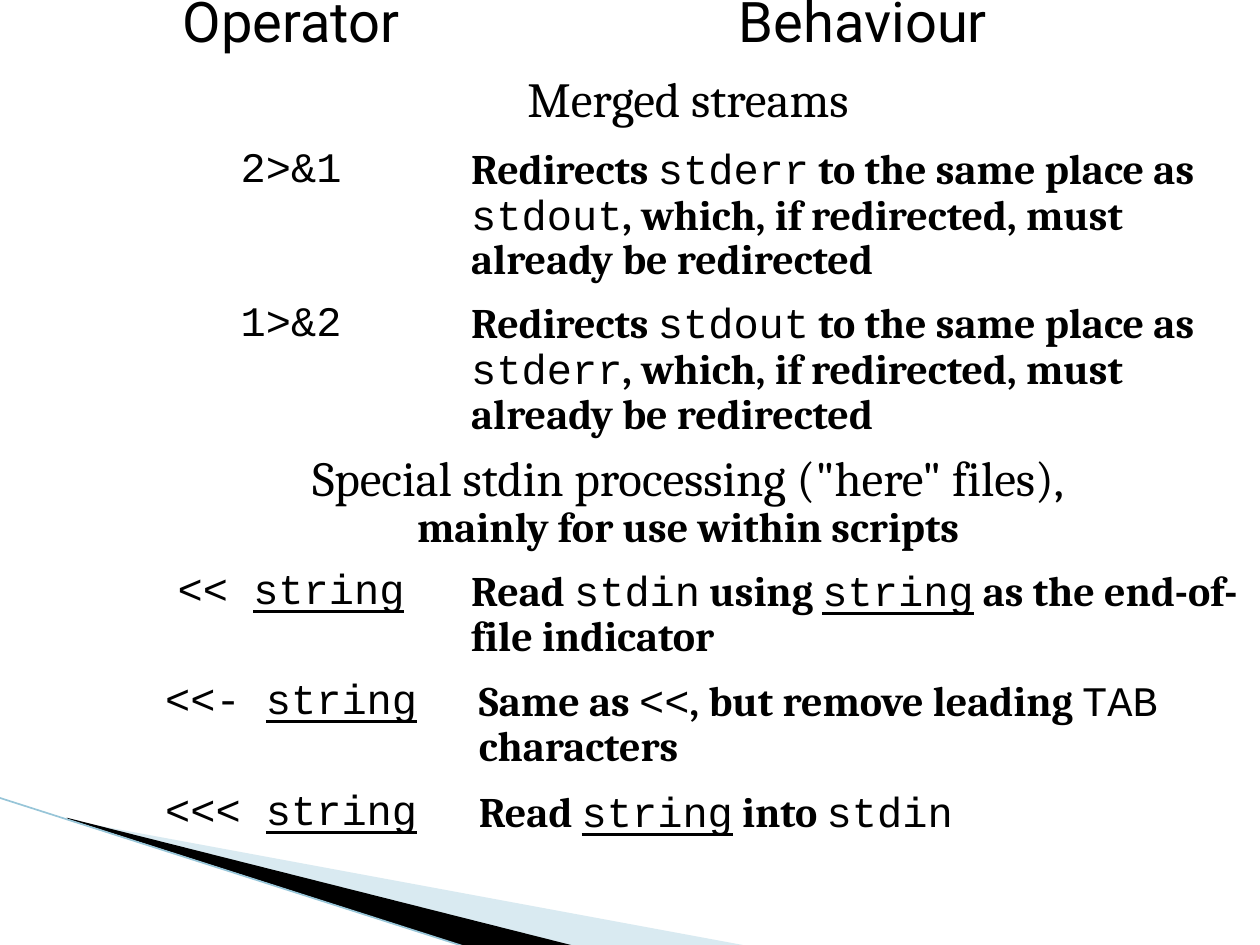
import pptx
import pptx.util
import pptx.dml.color
import pptx.enum.shapes
import pptx.enum.text
import pptx.oxml.ns
import lxml.etree
from pptx.util import Inches

NO_STYLE_NO_GRID = "{2D5ABB26-0587-4C30-8999-92F81FD0307C}"
# style name: (font, size, bold, underline)
STYLES = {
    "header": ("Roboto", 32, False, False),
    "section": ("Cambria", 28, False, False),
    "text": ("Cambria", 24, True, False),
    "code": ("Courier New", 24, False, False),
    "variable": ("Courier New", 24, False, True),
}


def color(value):
    return pptx.dml.color.RGBColor.from_string(value)


def fill_cell(cell, paragraphs, centered, margins):
    """Write paragraphs, each a list of (style name, text) spans, into a cell."""
    side, top, bottom = margins
    cell.margin_left = cell.margin_right = Inches(side)
    cell.margin_top, cell.margin_bottom = Inches(top), Inches(bottom)
    frame = cell.text_frame
    for index, spans in enumerate(paragraphs):
        para = frame.add_paragraph() if index else frame.paragraphs[0]
        last = index == len(paragraphs) - 1
        align = pptx.enum.text.PP_ALIGN
        para.alignment = align.CENTER if centered else align.LEFT
        para.line_spacing = 0.91 if last else 0.96
        para.space_after = pptx.util.Pt(14.2 if last else 0)
        for style, text in spans:
            span = para.add_run()
            span.text = text
            font = span.font
            font.name, size, font.bold, font.underline = STYLES[style]
            font.size = pptx.util.Pt(size)
            font.color.rgb = color("000000")


deck = pptx.Presentation()
deck.slide_width, deck.slide_height = Inches(10), Inches(7.5)
page = deck.slides.add_slide(deck.slide_layouts[6])

# Corner wedges
wedges = [
    ("A0CBDC", 40, [(0.55, 6.51), (5.95, 7.51), (4.56, 7.51), (0.55, 6.5)]),
    ("000000", 100, [(0.53, 6.49), (4.57, 7.51), (3.72, 7.52), (0.54, 6.5)]),
]
for fill, opacity, corners in wedges:
    points = [(Inches(x), Inches(y)) for x, y in corners]
    builder = page.shapes.build_freeform(*points[0])
    builder.add_line_segments(points[1:], close=True)
    wedge = builder.convert_to_shape()
    wedge.shadow.inherit = False
    wedge.fill.solid()
    wedge.fill.fore_color.rgb = color(fill)
    wedge.line.fill.background()
    if opacity < 100:
        tone = wedge.fill._xPr.find(".//" + pptx.oxml.ns.qn("a:srgbClr"))
        alpha = lxml.etree.SubElement(tone, pptx.oxml.ns.qn("a:alpha"))
        alpha.set("val", str(opacity * 1000))

edge = page.shapes.add_connector(
    pptx.enum.shapes.MSO_CONNECTOR.STRAIGHT,
    Inches(-0.01), Inches(6.33), Inches(3.71), Inches(7.52))
edge.line.color.rgb = color("97C5D8")
edge.line.width = pptx.util.Pt(0.95)
lxml.etree.SubElement(edge._element.spPr, pptx.oxml.ns.qn("a:effectLst"))

# Operator table: (height, margins, cells); a single cell spans both columns
TIGHT, WIDE = (0.04, 0.11, 0.04), (0.1, 0.12, 0.05)
rows = [
    (0.6, (0.04, 0.13, 0.04), [[[("header", "Operator")]], [[("header", "Behaviour")]]]),
    (0.56, (0.1, 0.13, 0.05), [[[("section", "Merged streams")]]]),
]
for operator, source, target in [("2>&1", "stderr", "stdout"), ("1>&2", "stdout", "stderr")]:
    rows.append((1.15, TIGHT, [
        [[("code", operator)]],
        [[("text", "Redirects "), ("code", source),
          ("text", " to the same place as "), ("code", target),
          ("text", ", which, if redirected, must already be redirected")]],
    ]))
rows.append((0.87, (0.04, 0.08, 0.04), [[
    [("section", 'Special stdin processing ("here" files),')],
    [("text", "mainly for use within scripts")],
]]))
here_files = [
    (0.8, TIGHT, "<< ", [("text", "Read "), ("code", "stdin"), ("text", " using "),
                         ("variable", "string"), ("text", " as the end-of-file indicator")]),
    (0.83, WIDE, "<<- ", [("text", "Same as "), ("code", "<<"),
                          ("text", ", but remove leading "), ("code", "TAB"),
                          ("text", " characters")]),
    (0.49, WIDE, "<<< ", [("text", "Read "), ("variable", "string"),
                          ("text", " into "), ("code", "stdin")]),
]
for height, margins, operator, behaviour in here_files:
    rows.append((height, margins,
                 [[[("code", operator), ("variable", "string")]], [behaviour]]))

frame = page.shapes.add_table(
    len(rows), 2, Inches(0.92), Inches(-0.17), Inches(9.08), Inches(6.45))
table = frame.table
table.first_row = table.horz_banding = False
table._tbl.tblPr.find(pptx.oxml.ns.qn("a:tableStyleId")).text = NO_STYLE_NO_GRID
table.columns[0].width, table.columns[1].width = Inches(2.78), Inches(6.3)
for index, (height, margins, cells) in enumerate(rows):
    table.rows[index].height = Inches(height)
    for cell in table.rows[index].cells:
        cell.fill.background()
    if len(cells) == 1:
        table.cell(index, 0).merge(table.cell(index, 1))
    for column, paragraphs in enumerate(cells):
        centered = column == 0 or index == 0
        fill_cell(table.cell(index, column), paragraphs, centered, margins)

deck.save("out.pptx")
